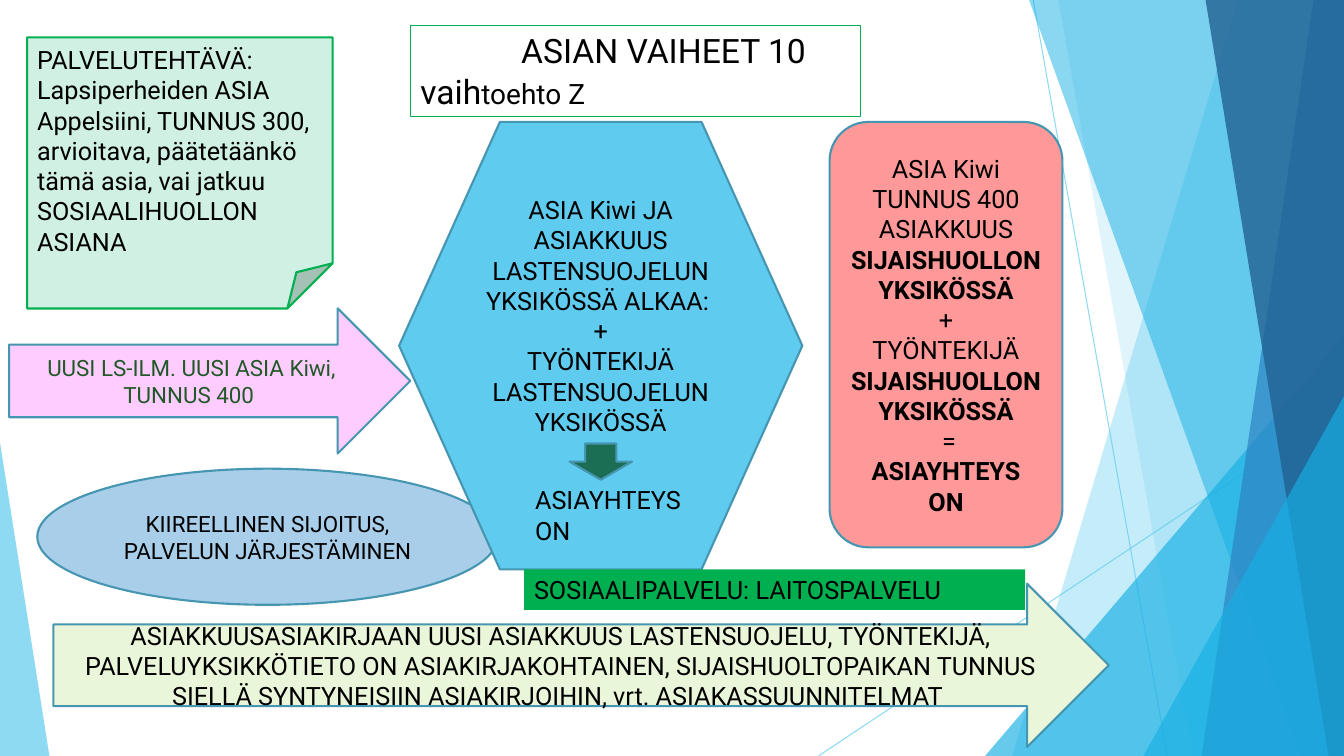
from lxml.etree import SubElement
from pptx import Presentation
from pptx.dml.color import RGBColor
from pptx.enum.shapes import MSO_CONNECTOR, MSO_SHAPE as Shape
from pptx.enum.text import MSO_ANCHOR as Anchor, PP_ALIGN as Align
from pptx.oxml.ns import qn
from pptx.util import Inches, Pt

FONT = "Roboto"
CELL = Inches(0.1)  # grid unit for every length on the slide
COLS, ROWS = 133.33, 75

BLACK = RGBColor(0x00, 0x00, 0x00)
FOREST = RGBColor(0x21, 0x58, 0x28)
OUTLINE = RGBColor(0x46, 0x96, 0xB1)
GREEN = RGBColor(0x00, 0xB0, 0x50)
MINT = RGBColor(0xCF, 0xF0, 0xE3)
LIME = RGBColor(0xEA, 0xF6, 0xD9)
PINK = RGBColor(0xFF, 0xCC, 0xFF)
SALMON = RGBColor(0xFF, 0x99, 0x99)
PALE_BLUE = RGBColor(0xA8, 0xCE, 0xEA)
TEAL = RGBColor(0x1B, 0x6E, 0x53)
SKY = RGBColor(0x5F, 0xCB, 0xEF)
AZURE = RGBColor(0x17, 0xB0, 0xE4)
BLUE = RGBColor(0x2E, 0x83, 0xC3)
NAVY = RGBColor(0x22, 0x62, 0x92)


def cells(*values):
    return [round(v * CELL) for v in values]


def part(box, left, top, width, height):
    """Turn an offset within a region's box into a box on the slide."""
    return box[0] + left, box[1] + top, width, height


def fade(sp, opacity):
    """Set the opacity, in percent, of the shape's fill and line colours."""
    for color in sp._element.spPr.iter(qn("a:srgbClr")):
        SubElement(color, qn("a:alpha")).set("val", str(opacity * 1000))


def write(sp, *paragraphs, size=18, color=BLACK, align=Align.CENTER,
          anchor=Anchor.MIDDLE):
    """Write paragraphs, each a list of (text, format) pairs; \\v breaks a line."""
    tf = sp.text_frame
    tf.word_wrap = True
    tf.vertical_anchor = anchor
    for i, runs in enumerate(paragraphs):
        p = tf.paragraphs[0] if i == 0 else tf.add_paragraph()
        p.alignment = align
        if isinstance(runs, str):
            runs = [(runs, {})]
        for text, style in runs:
            for j, line in enumerate(text.split("\v")):
                if j:
                    p.add_line_break()
                r = p.add_run()
                r.text = line
                r.font.name = FONT
                r.font.size = Pt(style.get("size", size))
                r.font.bold = style.get("bold", False)
                r.font.color.rgb = color
    return tf


def add_block(slide, kind, box, fill, line=OUTLINE, width=1.5):
    sp = slide.shapes.add_shape(kind, *cells(*box))
    sp.shadow.inherit = False
    sp.fill.solid()
    sp.fill.fore_color.rgb = fill
    if line is None:
        sp.line.fill.background()
    else:
        sp.line.color.rgb = line
        sp.line.width = Pt(width)
    return sp


def add_facet(slide, points, fill, opacity):
    points = [tuple(cells(x, y)) for x, y in points]
    builder = slide.shapes.build_freeform(*points[0])
    builder.add_line_segments(points[1:], close=True)
    sp = builder.convert_to_shape()
    sp.shadow.inherit = False
    sp.fill.solid()
    sp.fill.fore_color.rgb = fill
    sp.line.fill.background()
    fade(sp, opacity)


def add_corner(slide, box, apex, fill, opacity):
    sp = add_block(slide, Shape.ISOSCELES_TRIANGLE, box, fill, line=None)
    sp.adjustments[0] = apex
    fade(sp, opacity)


def background(slide, box):
    left, top, width, height = box
    right, bottom = left + width, top + height
    for ends in ((102.5, top, 115.8, bottom), (right, 40.3, 81.2, bottom)):
        line = slide.shapes.add_connector(MSO_CONNECTOR.STRAIGHT, *cells(*ends))
        line.line.color.rgb = SKY
        line.line.width = Pt(0.75)
        SubElement(line._element.spPr, qn("a:effectLst"))
        fade(line, 70)

    def band(top_x, bottom_x, fill, opacity):
        """Fill from a slanted edge to the right side of the box."""
        add_facet(slide, [(top_x, top), (right, top), (right, bottom),
                          (bottom_x, bottom)], fill, opacity)

    def right_corner(width, height, opacity=66):
        box = right - width, bottom - height, width, height
        add_corner(slide, box, 1, AZURE, opacity)

    band(122.8, 100.4, SKY, 36)
    band(105, 118.3, SKY, 20)
    right_corner(35.6, 41.7)
    band(102.1, 129.1, AZURE, 50)
    band(130.3, 119.2, BLUE, 70)
    band(119.6, 131.8, NAVY, 80)
    right_corner(19.9, 35.7)
    add_corner(slide, (left, bottom - 31.1, 4.9, 31.1), 0, SKY, 70)


def heading(slide, box):
    sp = slide.shapes.title
    sp.left, sp.top, sp.width, sp.height = cells(*box)
    sp.line.color.rgb = GREEN
    sp.line.width = Pt(0.75)
    tf = write(sp, [("ASIAN VAIHEET 10 vaih", {"size": 24}), ("toehto Z", {})],
               size=20, align=Align.LEFT, anchor=Anchor.TOP)
    p = tf.paragraphs[0]
    p.line_spacing = 1.0
    p.space_before = Pt(0)
    p._p.get_or_add_pPr().set("indent", str(Inches(1)))


def record_band(slide, box):
    sp = add_block(slide, Shape.RIGHT_ARROW, box, LIME)
    write(sp, "ASIAKKUUSASIAKIRJAAN UUSI ASIAKKUUS LASTENSUOJELU, TYÖNTEKIJÄ, "
              "PALVELUYKSIKKÖTIETO ON ASIAKIRJAKOHTAINEN, SIJAISHUOLTOPAIKAN "
              "TUNNUS SIELLÄ SYNTYNEISIIN ASIAKIRJOIHIN, vrt. "
              "ASIAKASSUUNNITELMAT ")


def intake_column(slide, box):
    note = add_block(slide, Shape.FOLDED_CORNER,
                     part(box, 1.8, 0, 30.3, 26.9), MINT, GREEN)
    write(note, "PALVELUTEHTÄVÄ:",
          "Lapsiperheiden ASIA Appelsiini, TUNNUS 300, arvioitava, "
          "päätetäänkö tämä asia, vai jatkuu SOSIAALIHUOLLON ASIANA",
          align=Align.LEFT)
    urgent = add_block(slide, Shape.OVAL,
                       part(box, 2.8, 42.8, 45.7, 13.5), PALE_BLUE)
    write(urgent, "KIIREELLINEN SIJOITUS, PALVELUN JÄRJESTÄMINEN", size=16)
    report = add_block(slide, Shape.RIGHT_ARROW,
                       part(box, 0, 26.9, 39.8, 14.4), PINK)
    write(report, "UUSI LS-ILM. UUSI ASIA Kiwi, TUNNUS 400 ",
          size=16, color=FOREST)


def child_welfare_phase(slide, box):
    sp = add_block(slide, Shape.HEXAGON, box, SKY)
    tf = write(sp, "ASIA Kiwi JA ASIAKKUUS LASTENSUOJELUN YKSIKÖSSÄ ALKAA: ",
               "+", "TYÖNTEKIJÄ LASTENSUOJELUN YKSIKÖSSÄ")
    tf.margin_bottom = Inches(0.65)
    add_block(slide, Shape.DOWN_ARROW, part(box, 16.9, 31.9, 6.2, 3.6), TEAL)
    link = slide.shapes.add_textbox(*cells(*part(box, 12.5, 35.5, 16.5, 7.1)))
    write(link, "ASIAYHTEYS ON", align=Align.LEFT, anchor=Anchor.TOP)


def service_label(slide, box):
    sp = add_block(slide, Shape.RECTANGLE, box, GREEN, line=None)
    write(sp, "SOSIAALIPALVELU: LAITOSPALVELU",
          align=Align.LEFT, anchor=Anchor.TOP)


def foster_care_phase(slide, box):
    sp = add_block(slide, Shape.ROUNDED_RECTANGLE, box, SALMON)
    bold = {"bold": True}
    unit = ("SIJAISHUOLLON\vYKSIKÖSSÄ", bold)
    write(sp, [("ASIA Kiwi TUNNUS 400 ASIAKKUUS ", {}), unit], "+",
          [("TYÖNTEKIJÄ ", {}), unit], " =", [("ASIAYHTEYS ON", bold)])


def main():
    prs = Presentation()
    prs.slide_width, prs.slide_height = cells(COLS, ROWS)
    slide = prs.slides.add_slide(prs.slide_layouts[5])
    background(slide, (0, 0, COLS, ROWS))
    heading(slide, (40.7, 2.5, 44.7, 9.1))
    record_band(slide, (5.3, 57.9, 104.7, 16.2))
    intake_column(slide, (0.9, 3.7, 48.5, 56.3))
    child_welfare_phase(slide, (39.6, 12.1, 40, 44.4))
    service_label(slide, (52, 56.5, 49.7, 4))
    foster_care_phase(slide, (82.3, 12.1, 23.1, 42.2))
    prs.save("out.pptx")


if __name__ == "__main__":
    main()
